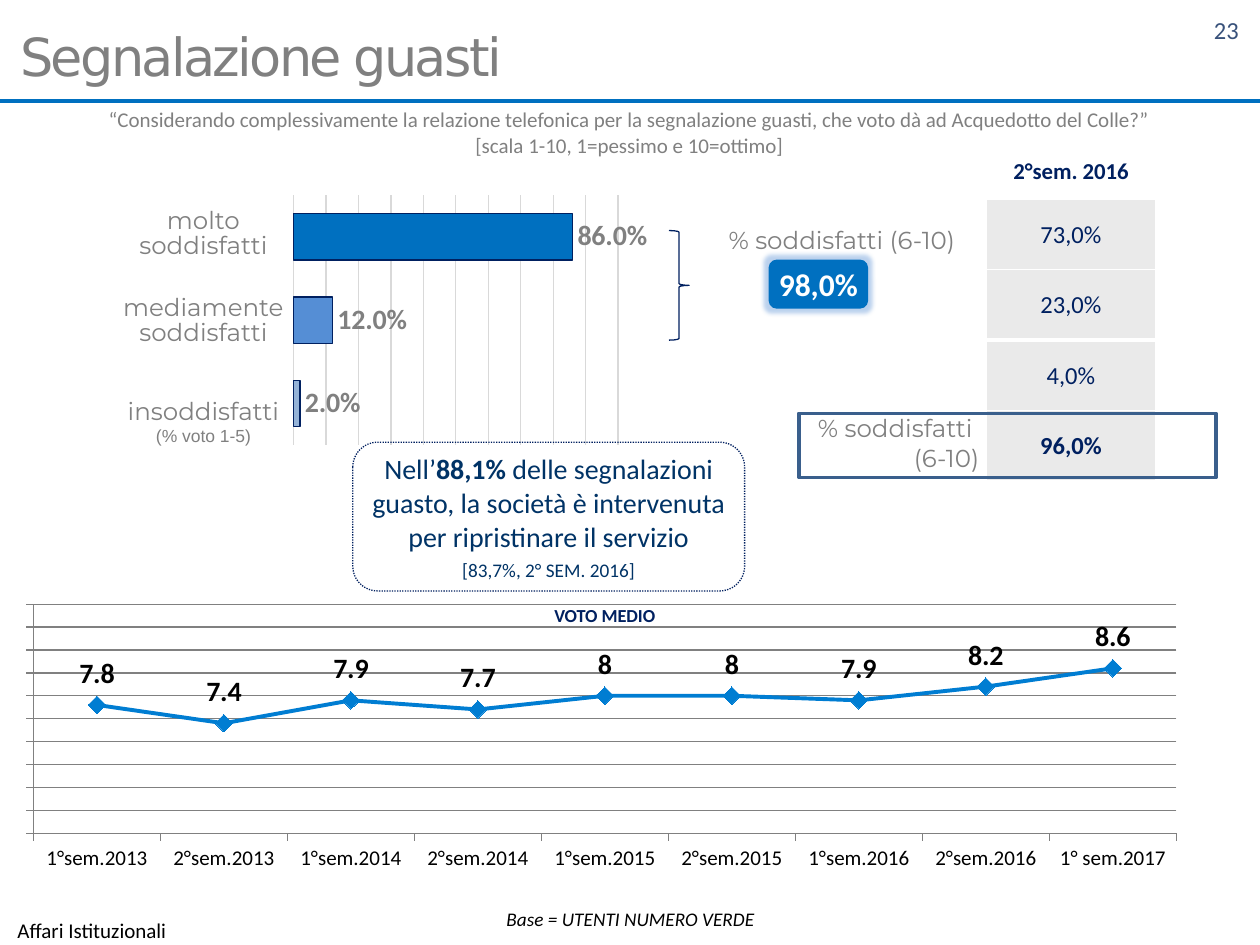
import pptx
import pptx.chart.data
import pptx.dml.color
import pptx.enum.chart
import pptx.enum.dml
import pptx.enum.shapes
import pptx.enum.text
import pptx.oxml
import pptx.oxml.ns
import pptx.util

RGB = pptx.dml.color.RGBColor
Pt = pptx.util.Pt
SHAPE = pptx.enum.shapes.MSO_SHAPE
ANCHOR = pptx.enum.text.MSO_ANCHOR
ALIGN = pptx.enum.text.PP_ALIGN
CHART = pptx.enum.chart
qn = pptx.oxml.ns.qn

BLUE = RGB(0x00, 0x70, 0xC0)
MID_BLUE = RGB(0x55, 0x8E, 0xD5)
PALE_BLUE = RGB(0x95, 0xB3, 0xD7)
LINE_BLUE = RGB(0x00, 0x7D, 0xD2)
FRAME_BLUE = RGB(0x3A, 0x5F, 0x8C)
PAGE_BLUE = RGB(0x39, 0x52, 0x7B)
NAVY = RGB(0x00, 0x20, 0x60)
NOTE_BLUE = RGB(0x00, 0x33, 0x66)
GREY = RGB(0x80, 0x80, 0x80)
GRID_GREY = RGB(0xD9, 0xD9, 0xD9)
CELL_GREY = RGB(0xEA, 0xEA, 0xEA)
WHITE = RGB(0xFF, 0xFF, 0xFF)
BLACK = RGB(0, 0, 0)

# The slide is a grid of 100 columns and 75 rows
WIDTH, HEIGHT = pptx.util.Inches(10), pptx.util.Inches(7.5)
COL, ROW = WIDTH / 100, HEIGHT / 75
PAD = (1, 0.5, 1, 0.5)


def grid(x, y, w, h):
    return int(x * COL), int(y * ROW), int(w * COL), int(h * ROW)


def set_frame(tf, anchor=ANCHOR.TOP, pad=PAD):
    tf.word_wrap = True
    tf.vertical_anchor = anchor
    tf.margin_left, tf.margin_top, tf.margin_right, tf.margin_bottom = grid(*pad)


def add_par(tf, *texts, size, color, font="Calibri", align=ALIGN.CENTER,
            bold=(), italic=False, before=None, leading=None):
    """Add a paragraph; bold holds the numbers of its bold runs."""
    first = tf.paragraphs[0]
    p = tf.add_paragraph() if first.runs else first
    p.alignment = align
    if before:
        p.space_before = Pt(before)
    if leading:
        p.line_spacing = Pt(leading)
    for i, text in enumerate(texts):
        r = p.add_run()
        r.text = text
        r.font.size, r.font.name = Pt(size), font
        r.font.bold, r.font.italic = i in bold, italic
        r.font.color.rgb = color
    return p


def add_text(s, box, *lines, anchor=ANCHOR.TOP, pad=PAD, **style):
    tf = s.shapes.add_textbox(*grid(*box)).text_frame
    set_frame(tf, anchor, pad)
    for line in lines:
        add_par(tf, line, **style)
    return tf


def add_shape(s, kind, box, fill=None, line=None, width=0.75):
    sp = s.shapes.add_shape(kind, *grid(*box))
    sp.shadow.inherit = False
    if fill is None:
        sp.fill.background()
    else:
        sp.fill.solid()
        sp.fill.fore_color.rgb = fill
    if line is None:
        sp.line.fill.background()
    else:
        sp.line.color.rgb = line
        sp.line.width = Pt(width)
    return sp


def add_rule(s, y):
    c = s.shapes.add_connector(pptx.enum.shapes.MSO_CONNECTOR.STRAIGHT,
                               0, int(y * ROW), WIDTH, int(y * ROW))
    c.line.color.rgb, c.line.width = BLUE, Pt(2)
    pptx.oxml.ns  # connector effects are emptied below
    c._element.spPr.append(c._element.makeelement(qn("a:effectLst"), {}))


def add_glow(sp, color, radius):
    sp._element.spPr.find(qn("a:effectLst")).append(pptx.oxml.parse_xml(
        f'<a:glow {pptx.oxml.ns.nsdecls("a")} rad="{int(Pt(radius))}">'
        f'<a:srgbClr val="{color}"><a:alpha val="40000"/></a:srgbClr></a:glow>'))


def set_borders(cell, top=1, bottom=1):
    tc_pr = cell._tc.get_or_add_tcPr()
    widths = {"lnL": 1, "lnR": 1, "lnT": top, "lnB": bottom}
    for i, (side, width) in enumerate(widths.items()):
        tc_pr.insert(i, pptx.oxml.parse_xml(
            f'<a:{side} {pptx.oxml.ns.nsdecls("a")} w="{int(Pt(width))}">'
            f'<a:solidFill><a:srgbClr val="{WHITE}"/></a:solidFill></a:{side}>'))


def add_scores(s, box, header, scores):
    rows = len(scores) + 1
    table = s.shapes.add_table(rows, 1, *grid(*box)).table
    table.first_row = table.horz_banding = False
    for i, text in enumerate([header] + scores):
        table.rows[i].height = int((5.6 if i else 4.3) * ROW)
        cell = table.cell(i, 0)
        cell.vertical_anchor = ANCHOR.MIDDLE
        pad = (0.1, 0.1, 0.1, 0) if i else (0.4, 0.5, 0.4, 0.5)
        cell.margin_left, cell.margin_top, cell.margin_right, cell.margin_bottom = grid(*pad)
        if i:
            cell.fill.solid()
            cell.fill.fore_color.rgb = CELL_GREY
        else:
            cell.fill.background()
        set_borders(cell, 2.25 if i == 3 else 1, 2.25 if i == 2 else 1)
        add_par(cell.text_frame, text, size=14 if i else 13, color=NAVY,
                bold=(0,) if i in (0, rows - 1) else ())


def add_chart(s, kind, box, cats, vals, plot, size):
    data = pptx.chart.data.CategoryChartData()
    data.categories = cats
    data.add_series("Voto", vals)
    chart = s.shapes.add_chart(kind, *grid(*box), data).chart
    chart.has_title = chart.has_legend = False
    chart.font.size, chart.font.name = Pt(size), "Calibri"
    chart.font.color.rgb = BLACK
    # Fixed inner plot area, as shares of the chart
    area = chart._chartSpace.chart.plotArea
    for old in area.findall(qn("c:layout")):
        area.remove(old)
    places = "".join(f'<c:{k} val="{v}"/>' for k, v in zip("xywh", plot))
    area.insert(0, pptx.oxml.parse_xml(
        f'<c:layout {pptx.oxml.ns.nsdecls("c")}><c:manualLayout>'
        '<c:layoutTarget val="inner"/><c:xMode val="edge"/><c:yMode val="edge"/>'
        f'{places}</c:manualLayout></c:layout>'))
    chart.plots[0].vary_by_categories = False
    return chart, chart.plots[0].series[0]


def set_scale(axis, low, high, step, grid_color):
    axis.minimum_scale, axis.maximum_scale, axis.major_unit = low, high, step
    axis.has_major_gridlines = True
    axis.major_gridlines.format.line.color.rgb = grid_color
    axis.major_gridlines.format.line.width = Pt(0.75)


def set_labels(ser, fmt, color, position):
    labels = ser.data_labels
    labels.show_value = True
    labels.number_format, labels.number_format_is_linked = fmt, False
    labels.position = position
    labels.font.size, labels.font.bold = Pt(16), True
    labels.font.color.rgb = color


def add_bars(s):
    chart, ser = add_chart(s, CHART.XL_CHART_TYPE.BAR_CLUSTERED, (21.6, 13.9, 33.9, 22.8),
                           ["1", "2", "3"], [0.86, 0.12, 0.02], (0.05, 0.07, 0.76, 0.87), 10)
    chart.plots[0].gap_width = 80
    chart.category_axis.reverse_order = True
    chart.category_axis.visible = chart.value_axis.visible = False
    set_scale(chart.value_axis, 0, 1, 0.1, GRID_GREY)
    for i, color in enumerate((BLUE, MID_BLUE, PALE_BLUE)):
        fmt = ser.points[i].format
        fmt.fill.solid()
        fmt.fill.fore_color.rgb = color
        fmt.line.color.rgb, fmt.line.width = NAVY, Pt(0.75)
    set_labels(ser, "0.0%", GREY, CHART.XL_LABEL_POSITION.OUTSIDE_END)


def add_trend(s):
    cats = [f"{half}°sem.{year}" for year in range(2013, 2017) for half in (1, 2)]
    chart, ser = add_chart(s, CHART.XL_CHART_TYPE.LINE_MARKERS, (-1.2, 47.9, 96.5, 27.6),
                           cats + ["1° sem.2017"], [7.8, 7.4, 7.9, 7.7, 8, 8, 7.9, 8.2, 8.6],
                           (0.04, 0, 0.94, 0.66), 18)
    set_scale(chart.value_axis, 5, 10, 0.5, GREY)
    chart.value_axis.tick_label_position = CHART.XL_TICK_LABEL_POSITION.NONE
    chart.category_axis.tick_labels.font.size = Pt(12)
    for axis in (chart.value_axis, chart.category_axis):
        axis.major_tick_mark = CHART.XL_TICK_MARK.OUTSIDE
        axis.format.line.color.rgb = GREY
    ser.smooth = False
    ser.format.line.color.rgb, ser.format.line.width = LINE_BLUE, Pt(2.25)
    ser.marker.style, ser.marker.size = CHART.XL_MARKER_STYLE.DIAMOND, 10
    ser.marker.format.fill.solid()
    ser.marker.format.fill.fore_color.rgb = LINE_BLUE
    ser.marker.format.line.color.rgb = LINE_BLUE
    set_labels(ser, "General", BLACK, CHART.XL_LABEL_POSITION.ABOVE)


def main():
    prs = pptx.Presentation()
    prs.slide_width, prs.slide_height = WIDTH, HEIGHT
    s = prs.slides.add_slide(prs.slide_layouts[6])
    label = dict(size=14, color=GREY, font="Montserrat")
    side_label = dict(label, align=ALIGN.RIGHT, anchor=ANCHOR.MIDDLE, pad=(1, 0, 1, 0))

    # Header and footer
    add_rule(s, 8)
    add_text(s, (76, 0.7, 23.3, 4), "23", size=14, color=PAGE_BLUE, align=ALIGN.RIGHT)
    add_text(s, (0.4, 72.3, 31.5, 3), "Affari Istituzionali", size=12, color=BLACK,
             align=ALIGN.LEFT, anchor=ANCHOR.MIDDLE)
    tf = add_text(s, (0, 1.3, 97.2, 6.3), "Segnalazione guasti", size=30, color=GREY,
                  font="DejaVu Sans", align=ALIGN.LEFT, anchor=ANCHOR.MIDDLE, pad=(1.6, 0.5, 1, 0.5))
    tf.paragraphs[0].runs[0].font._element.set("spc", "-150")
    add_text(s, (6.9, 8, 86.1, 5),
             "“Considerando complessivamente la relazione telefonica per la segnalazione guasti, "
             "che voto dà ad Acquedotto del Colle?”",
             "[scala 1-10, 1=pessimo e 10=ottimo]", size=12, color=GREY)

    # Satisfaction bars and their labels
    add_text(s, (7.5, 16.2, 17.3, 6.1), "molto soddisfatti", leading=14, **label)
    add_text(s, (7.5, 23.1, 17.3, 6.1), "mediamente soddisfatti", leading=14, **label)
    tf = add_text(s, (7.5, 30.9, 17.3, 5.1), "insoddisfatti", **label)
    add_par(tf, "(% voto 1-5)", size=10, color=GREY, font="Arial")
    add_bars(s)

    # Total of satisfied users
    add_shape(s, SHAPE.RIGHT_BRACE, (53.1, 18.3, 1.6, 8.7), line=NAVY)
    add_text(s, (52.8, 17.5, 24, 3.1), "% soddisfatti (6-10)", **side_label)
    sp = add_shape(s, SHAPE.ROUNDED_RECTANGLE, (61, 20.6, 7.9, 3.9), fill=BLUE)
    add_glow(sp, MID_BLUE, 5)
    set_frame(sp.text_frame, ANCHOR.MIDDLE, (0, 0, 0, 0))
    add_par(sp.text_frame, "98,0%", size=18, color=WHITE, bold=(0,))

    # Previous half-year
    add_scores(s, (78.3, 11.5, 13.4, 26.7), "2°sem. 2016", ["73,0%", "23,0%", "4,0%", "96,0%"])
    add_shape(s, SHAPE.RECTANGLE, (63.4, 32.8, 33.1, 5.1), line=FRAME_BLUE, width=2)
    add_text(s, (54.7, 33.6, 24, 3.1), "% soddisfatti ", "(6-10)", **side_label)

    # Average score over time
    add_trend(s)
    add_text(s, (37, 47.7, 22, 2.6), "VOTO MEDIO", size=10.5, color=NAVY, bold=(0,), leading=11)
    sp = add_shape(s, SHAPE.ROUNDED_RECTANGLE, (39.6, 71.5, 20.9, 2.9), fill=WHITE)
    set_frame(sp.text_frame, ANCHOR.MIDDLE, (0, 0, 0, 0))
    add_par(sp.text_frame, "Base = UTENTI NUMERO VERDE", size=11, color=BLACK, italic=True)

    # Note on repairs
    sp = add_shape(s, SHAPE.ROUNDED_RECTANGLE, (28, 35.1, 31.1, 11.8), line=NAVY)
    sp.line.dash_style = pptx.enum.dml.MSO_LINE.ROUND_DOT
    tf = sp.text_frame
    set_frame(tf, ANCHOR.MIDDLE, (0.4, 0.4, 0.4, 0.4))
    add_par(tf, "Nell’", "88,1%", " delle segnalazioni", size=16, color=NOTE_BLUE, bold=(1,))
    for text in ("guasto, la società è intervenuta", "per ripristinare il servizio"):
        add_par(tf, text, size=16, color=NOTE_BLUE)
    add_par(tf, "[83,7%, 2° SEM. 2016]", size=11, color=NOTE_BLUE, before=3)

    prs.save("out.pptx")


if __name__ == "__main__":
    main()
